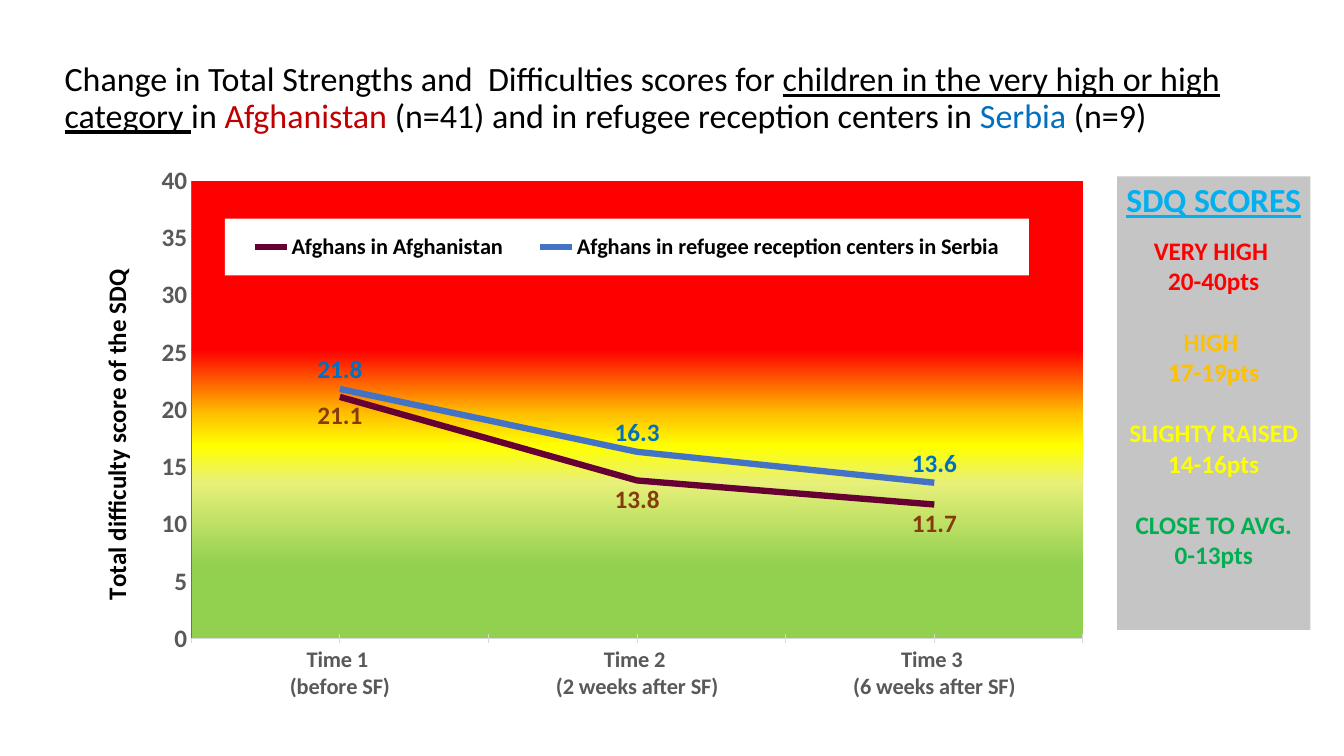
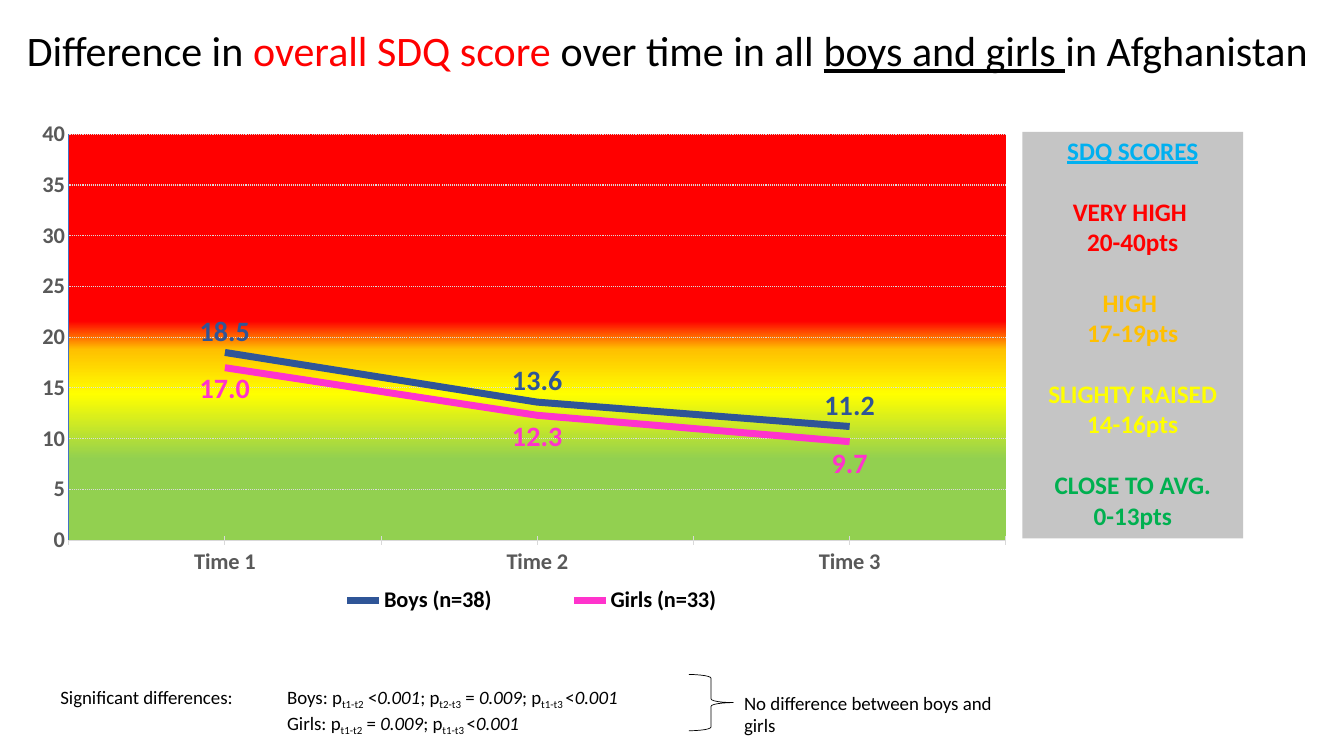
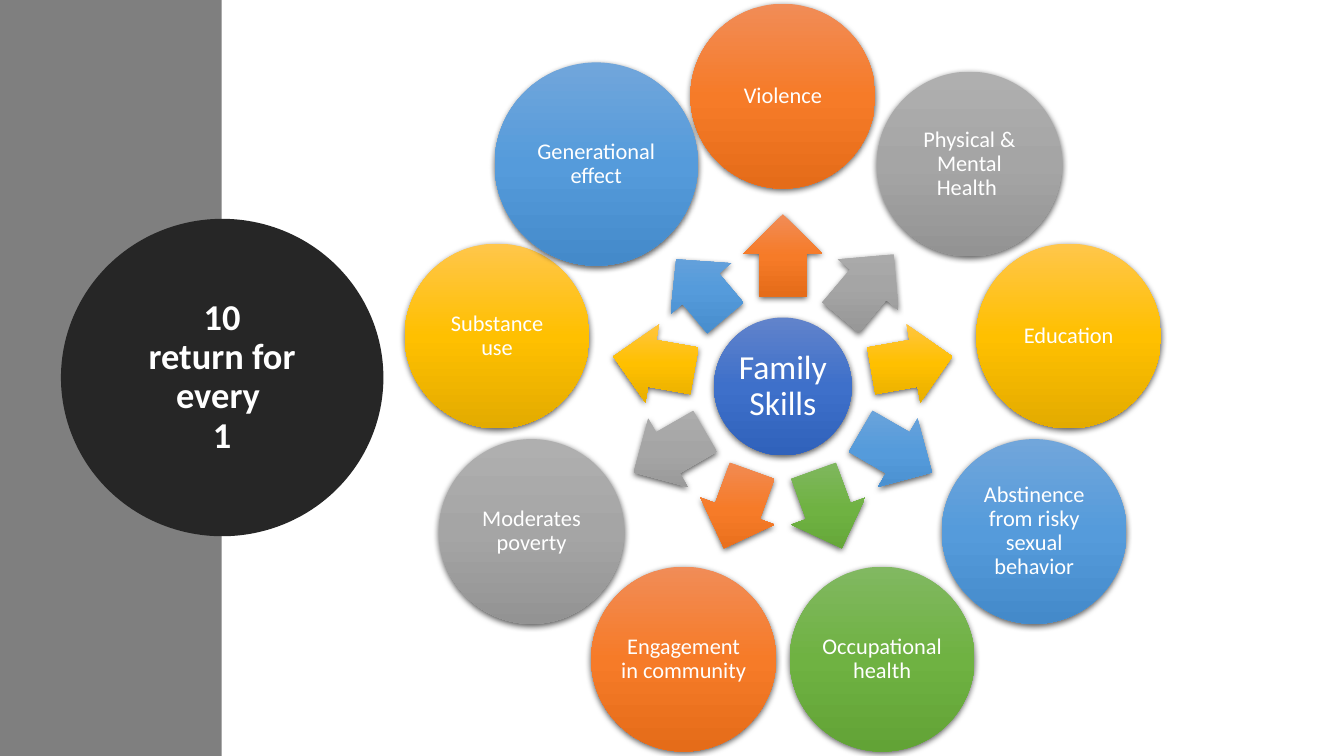
import dataclasses
import math

import pptx
import pptx.chart.data
import pptx.dml.color
import pptx.enum.chart
import pptx.enum.dml
import pptx.enum.shapes
import pptx.enum.text
import pptx.oxml
import pptx.oxml.ns
import pptx.util

SHAPES = pptx.enum.shapes.MSO_SHAPE
ANCHOR = pptx.enum.text.MSO_ANCHOR
ALIGN = pptx.enum.text.PP_ALIGN
LEGEND = pptx.enum.chart.XL_LEGEND_POSITION
LABEL = pptx.enum.chart.XL_LABEL_POSITION
TICK = pptx.enum.chart.XL_TICK_MARK
qn = pptx.oxml.ns.qn


@dataclasses.dataclass(frozen=True)
class Theme:
    """Grid, font, colours and type sizes of the deck."""

    font: str = "Calibri"
    columns: int = 160
    rows: int = 90
    cell: int = pptx.util.Inches(7.5) // 90
    black: str = "000000"
    white: str = "FFFFFF"
    panel: str = "C5C5C5"
    side: str = "7F7F7F"
    disc: str = "262626"
    axis_text: str = "595959"
    axis_line: str = "D9D9D9"
    grid_line: str = "DBDBDB"
    blue: str = "4472C4"
    dark_blue: str = "2F5597"
    label_blue: str = "0070C0"
    sky: str = "00B0F0"
    plum: str = "660033"
    brown: str = "843C0B"
    pink: str = "FF33CC"
    crimson: str = "C00000"
    red: str = "FF0000"
    amber: str = "FFC000"
    yellow: str = "FFFF00"
    lemon: str = "E7F079"
    lime: str = "92D050"
    green: str = "00B050"
    note: float = 13.5
    small: int = 16
    body: int = 18
    label: int = 20
    large: int = 24
    disc_text: int = 26
    heading: float = 24.3
    big_heading: int = 30


THEME = Theme()
ORANGE_FADE = ((0, "F18C57"), (50, "F67B28"), (100, "E56C19"))
GREY_FADE = ((0, "AFAFAF"), (50, "A5A5A5"), (100, "939393"))
GOLD_FADE = ((0, "FFC64B"), (50, "FFC000"), (100, "E3AB00"))
SKY_FADE = ((0, "71A6DB"), (50, "559BDB"), (100, "448ACA"))
LEAF_FADE = ((0, "81B861"), (50, "6FB242"), (100, "62A336"))
HUB_FADE = ((0, "6183CB"), (50, "3E70CA"), (100, "3062BB"))


def rgb(color):
    """Return a colour object for a hex string."""
    return pptx.dml.color.RGBColor.from_string(color)


def element(tag, body="", attributes=""):
    """Return a drawing or chart XML element."""
    names = pptx.oxml.ns.nsdecls("a", "c")
    return pptx.oxml.parse_xml(f"<{tag} {names} {attributes}>{body}</{tag}>")


def gradient(stops):
    """Return a top-to-bottom gradient fill."""
    marks = "".join(
        f'<a:gs pos="{share * 1000}"><a:srgbClr val="{color}"/></a:gs>'
        for share, color in stops)
    return element("a:gradFill", f'<a:gsLst>{marks}</a:gsLst><a:lin ang="5400000" scaled="0"/>',
                   'rotWithShape="0"')


def set_layout(parent, slot, shares, inner=False):
    """Place a chart part by shares of the chart's size."""
    for layout in parent.findall(qn("c:layout")):
        parent.remove(layout)
    body = '<c:layoutTarget val="inner"/>' if inner else ""
    body += '<c:xMode val="edge"/><c:yMode val="edge"/>'
    body += "".join(f'<c:{key} val="{share}"/>' for key, share in zip("xywh", shares))
    parent.insert(slot, element("c:layout", f"<c:manualLayout>{body}</c:manualLayout>"))


def set_font(font, size, color, bold=None):
    """Give a font the deck's typeface, a size and a colour."""
    font.name = THEME.font
    font.size = pptx.util.Pt(size)
    font.color.rgb = rgb(color)
    font.bold = bold


class Deck:
    """Presentation style together with the current slide."""

    def __init__(self):
        """Start an empty deck on the theme's grid."""
        self.deck = pptx.Presentation()
        self.deck.slide_width = THEME.columns * THEME.cell
        self.deck.slide_height = THEME.rows * THEME.cell
        self.page = None

    def place(self, area):
        """Turn grid columns and rows into lengths."""
        return [round(step * THEME.cell) for step in area]

    def add_page(self, titled=True):
        """Start a slide."""
        self.page = self.deck.slides.add_slide(self.deck.slide_layouts[5 if titled else 6])

    def add_spans(self, para, spans, size):
        """Add spans of (text, look) to a paragraph."""
        for text, look in spans:
            span = para.add_run()
            span.text = text
            set_font(span.font, size, look.get("color", THEME.black))
            span.font.underline = look.get("underline")
            span.font.italic = look.get("italic")
            if look.get("subscript"):
                span.font._element.set("baseline", "-25000")

    def title(self, area, spans, size):
        """Move the title placeholder and fill it."""
        box = self.page.shapes.title
        box.left, box.top, box.width, box.height = self.place(area)
        frame = box.text_frame
        frame.auto_size = pptx.enum.text.MSO_AUTO_SIZE.NONE
        frame.vertical_anchor = ANCHOR.MIDDLE
        para = frame.paragraphs[0]
        para.alignment = ALIGN.LEFT
        para.line_spacing = 0.9
        self.add_spans(para, spans, size)

    def text(self, area, lines, tab=None):
        """Add a note with one paragraph for each line of spans."""
        frame = self.page.shapes.add_textbox(*self.place(area)).text_frame
        frame.word_wrap = True
        for number, spans in enumerate(lines):
            para = frame.add_paragraph() if number else frame.paragraphs[0]
            if tab:
                stop = f'<a:tab pos="{tab * THEME.cell}" algn="l"/>'
                para._p.get_or_add_pPr().append(element("a:tabLst", stop))
            self.add_spans(para, spans, THEME.note)

    def shape(self, kind, area, fill=None, line=None, width=1):
        """Add a preset shape with a plain fill, a gradient or no fill."""
        box = self.page.shapes.add_shape(kind, *self.place(area))
        box.shadow.inherit = False
        if isinstance(fill, str):
            box.fill.solid()
            box.fill.fore_color.rgb = rgb(fill)
        else:
            box.fill.background()
        if line:
            box.line.color.rgb = rgb(line)
            box.line.width = pptx.util.Pt(width)
        else:
            box.line.fill.background()
        if isinstance(fill, tuple):
            outline = box._element.spPr
            outline.replace(outline.find(qn("a:noFill")), gradient(fill))
            tint = '<a:srgbClr val="000000"><a:alpha val="63000"/></a:srgbClr>'
            shadow = element("a:outerShdw", tint,
                             'blurRad="57150" dist="19050" dir="5400000" algn="ctr" rotWithShape="0"')
            outline.find(qn("a:effectLst")).append(shadow)
        return box

    def caption(self, box, text, size, inset=None, bold=None):
        """Put centred white text inside a shape."""
        frame = box.text_frame
        frame.word_wrap = True
        frame.vertical_anchor = ANCHOR.MIDDLE
        if inset is not None:
            self.inset(frame, inset)
        para = frame.paragraphs[0]
        para.text = text
        para.alignment = ALIGN.CENTER
        para.line_spacing = 0.9
        for span in para.runs:
            set_font(span.font, size, THEME.white, bold)

    def inset(self, frame, inset):
        """Set all four margins of a text frame, in cells."""
        margin = round(inset * THEME.cell)
        frame.margin_left = frame.margin_right = margin
        frame.margin_top = frame.margin_bottom = margin

    def score_panel(self, area, heading_size, first_gap):
        """Add the grey key of score bands."""
        bands = (("SDQ SCORES", THEME.sky, 0),
                 ("VERY HIGH \n20-40pts", THEME.red, first_gap),
                 ("HIGH \n17-19pts", THEME.amber, 22),
                 ("SLIGHTY RAISED\n14-16pts", THEME.yellow, 22),
                 ("CLOSE TO AVG.\n0-13pts", THEME.green, 22))
        frame = self.shape(SHAPES.RECTANGLE, area, THEME.panel).text_frame
        frame.word_wrap = True
        frame.vertical_anchor = ANCHOR.TOP
        self.inset(frame, 0.36)
        for number, (text, color, gap) in enumerate(bands):
            para = frame.add_paragraph() if number else frame.paragraphs[0]
            para.text = text
            para.alignment = ALIGN.CENTER
            if gap:
                para.space_before = pptx.util.Pt(gap)
            for span in para.runs:
                set_font(span.font, THEME.body if number else heading_size, color, True)
                span.font.underline = number == 0

    def line_chart(self, area, categories, series, plot, stops, legend, legend_area,
                   value_size, label_size, width, grid=False, axis_title=None, legend_fill=None):
        """Add a line chart over a plot area coloured by score."""
        data = pptx.chart.data.CategoryChartData(number_format="#,##0.0")
        data.categories = categories
        for name, values, *_ in series:
            data.add_series(name, values)
        kind = pptx.enum.chart.XL_CHART_TYPE.LINE
        chart = self.page.shapes.add_chart(kind, *self.place(area), data).chart
        chart.has_title = False
        set_font(chart.font, 10, THEME.black)
        chart.plots[0].vary_by_categories = False
        for line, (_, _, color, label_color, position) in zip(chart.plots[0].series, series):
            line.smooth = False
            line.format.line.color.rgb = rgb(color)
            line.format.line.width = pptx.util.Pt(width)
            labels = line.data_labels
            labels.show_value = True
            labels.position = position
            labels.number_format = "#,##0.0"
            labels.number_format_is_linked = False
            set_font(labels.font, label_size, label_color, True)

        sides = ((chart.category_axis, THEME.small, THEME.axis_line, TICK.CROSS),
                 (chart.value_axis, value_size, THEME.blue, TICK.NONE))
        for axis, size, color, minor_tick in sides:
            axis.major_tick_mark = TICK.NONE
            axis.minor_tick_mark = minor_tick
            axis.has_major_gridlines = False
            set_font(axis.tick_labels.font, size, THEME.axis_text, True)
            axis.format.line.color.rgb = rgb(color)
            axis.format.line.width = pptx.util.Pt(0.75)
        scale = chart.value_axis
        scale.minimum_scale, scale.maximum_scale, scale.major_unit = 0, 40, 5
        scale.tick_labels.number_format = "0"
        scale.tick_labels.number_format_is_linked = False
        if grid:
            scale.has_major_gridlines = True
            rule = scale.major_gridlines.format.line
            rule.color.rgb = rgb(THEME.grid_line)
            rule.width = pptx.util.Pt(0.75)
            rule.dash_style = pptx.enum.dml.MSO_LINE.ROUND_DOT
        if axis_title:
            para = scale.axis_title.text_frame.paragraphs[0]
            para.text = axis_title
            set_font(para.runs[0].font, THEME.body, THEME.black, True)

        chart.has_legend = True
        chart.legend.position = legend
        chart.legend.include_in_layout = False
        set_font(chart.legend.font, THEME.small, THEME.black, True)
        key = chart.legend._element
        set_layout(key, 1, legend_area)
        if legend_fill:
            paint = f'<a:solidFill><a:srgbClr val="{legend_fill}"/></a:solidFill>'
            key.find(qn("c:overlay")).addnext(element("c:spPr", paint))
        plot_area = chart._chartSpace.chart.plotArea
        set_layout(plot_area, 0, plot, inner=True)
        backdrop = element("c:spPr")
        backdrop.append(gradient(stops))
        plot_area.append(backdrop)

    def wheel(self, center, hub, hub_size, petals):
        """Add a hub with arrows that point to a ring of circles."""
        def around(middle, width, height):
            """Return the area centred on a point."""
            return middle[0] - width / 2, middle[1] - height / 2, width, height

        def spoke(radius, angle):
            """Return a point on a circle about the hub."""
            turn = math.radians(angle)
            return center[0] + radius * math.cos(turn), center[1] + radius * math.sin(turn)

        disc = self.shape(SHAPES.OVAL, around(center, hub_size, hub_size), HUB_FADE)
        self.caption(disc, hub, THEME.large, 0.36)
        for number, (text, fade, size, reach, length) in enumerate(petals):
            angle = 360 / len(petals) * number - 90
            arrow = self.shape(SHAPES.RIGHT_ARROW, around(spoke(reach, angle), length, 9.4), fade)
            arrow.adjustments[0], arrow.adjustments[1] = 0.6, 0.5
            arrow.rotation = angle % 360
            petal = self.shape(SHAPES.OVAL, around(spoke(34.55, angle), size, size), fade)
            self.caption(petal, text, THEME.small, 0.24)


def significance(lead, tests):
    """Return the spans of one line of p-values."""
    spans = [(lead, {})]
    for number, (times, sign, value) in enumerate(tests):
        spans += [("; p" if number else "p", {}), (times, {"subscript": True}),
                  (sign, {}), (value, {"italic": True})]
    return spans


def main():
    """Build and save the three slides."""
    deck = Deck()

    deck.add_page()
    deck.title((6.5, 4, 143.5, 15.6), [
        ("Change in Total Strengths and  Difficulties scores for ", {}),
        ("children in the very high or high category ", {"underline": True}),
        ("in ", {}), ("Afghanistan", {"color": THEME.crimson}),
        (" (n=41) and in refugee reception centers in ", {}),
        ("Serbia", {"color": THEME.label_blue}), (" (n=9)", {})], THEME.heading)
    deck.line_chart(
        (2, 19.7, 129, 65.4),
        ("Time 1 \n(before SF)", "Time 2 \n(2 weeks after SF)", "Time 3 \n(6 weeks after SF)"),
        (("Afghans in Afghanistan", (21.1, 13.8, 11.7), THEME.plum, THEME.brown, LABEL.BELOW),
         ("Afghans in refugee reception centers in Serbia", (21.8, 16.3, 13.6),
          THEME.blue, THEME.label_blue, LABEL.ABOVE)),
        plot=(0.161, 0.02, 0.823, 0.84),
        stops=((37, THEME.red), (51, THEME.amber), (58, THEME.yellow),
               (66, THEME.lemon), (84, THEME.lime)),
        legend=LEGEND.TOP, legend_area=(0.192, 0.09, 0.742, 0.104), legend_fill=THEME.white,
        value_size=THEME.body, label_size=THEME.body, width=4.5,
        axis_title="Total difficulty score of the SDQ ")
    deck.score_panel((133, 21, 23, 54), THEME.large, 11)

    deck.add_page()
    deck.title((2, 0.7, 156, 11.2), [
        ("Difference in ", {}), ("overall SDQ score ", {"color": THEME.red}),
        ("over time in all ", {}), ("boys and girls ", {"underline": True}),
        ("in Afghanistan", {})], THEME.big_heading)
    deck.line_chart(
        (3, 13.3, 117.7, 62.6), ("Time 1", "Time 2", "Time 3"),
        (("Boys (n=38)", (18.5, 13.6, 11.2), THEME.dark_blue, THEME.dark_blue, LABEL.ABOVE),
         ("Girls (n=33)", (17, 12.3, 9.7), THEME.pink, THEME.pink, LABEL.BELOW)),
        plot=(0.044, 0.043, 0.948, 0.772),
        stops=((46, THEME.red), (53, THEME.amber), (64, THEME.yellow), (80, THEME.lime)),
        legend=LEGEND.BOTTOM, legend_area=(0.25, 0.89, 0.525, 0.08),
        value_size=THEME.small, label_size=THEME.label, width=5, grid=True)
    deck.score_panel((121.7, 15.7, 26.3, 48.4), THEME.body, 22)
    deck.text((6, 81, 70.7, 6.7), [
        significance("Significant differences: \tBoys: ", (
            ("t1-t2", " <", "0.001"), ("t2-t3", " = ", "0.009"), ("t1-t3 ", "<", "0.001"))),
        significance("\tGirls: ", (("t1-t2", " = ", "0.009"), ("t1-t3 ", "<", "0.001")))], tab=27)
    deck.shape(SHAPES.RIGHT_BRACE, (82, 80.3, 5.3, 6.7), line=THEME.black, width=0.5)
    deck.text((87.4, 81.7, 35.9, 6.7), [[("No difference between boys and girls", {})]])

    deck.add_page(titled=False)
    deck.shape(SHAPES.RECTANGLE, (0, 0, 26.4, THEME.rows), THEME.side)
    disc = deck.shape(SHAPES.OVAL, (8.4, 27.2, 36.1, 35.5), THEME.disc, THEME.disc, 13.75)
    deck.caption(disc, "10\nreturn for every \n1", THEME.disc_text, bold=True)
    usual = (22, 15.6, 9.8)
    deck.wheel((93.2, 46), "Family Skills", 16.4, (
        ("Violence", ORANGE_FADE, *usual),
        ("Physical & Mental Health ", GREY_FADE, *usual),
        ("Education", GOLD_FADE, *usual),
        ("Abstinence from risky sexual behavior", SKY_FADE, *usual),
        ("Occupational health", LEAF_FADE, *usual),
        ("Engagement in community", ORANGE_FADE, *usual),
        ("Moderates poverty", GREY_FADE, *usual),
        ("Substance use", GOLD_FADE, *usual),
        ("Generational effect", SKY_FADE, 24.2, 15.2, 9.1)))

    deck.deck.save("out.pptx")


if __name__ == "__main__":
    main()
